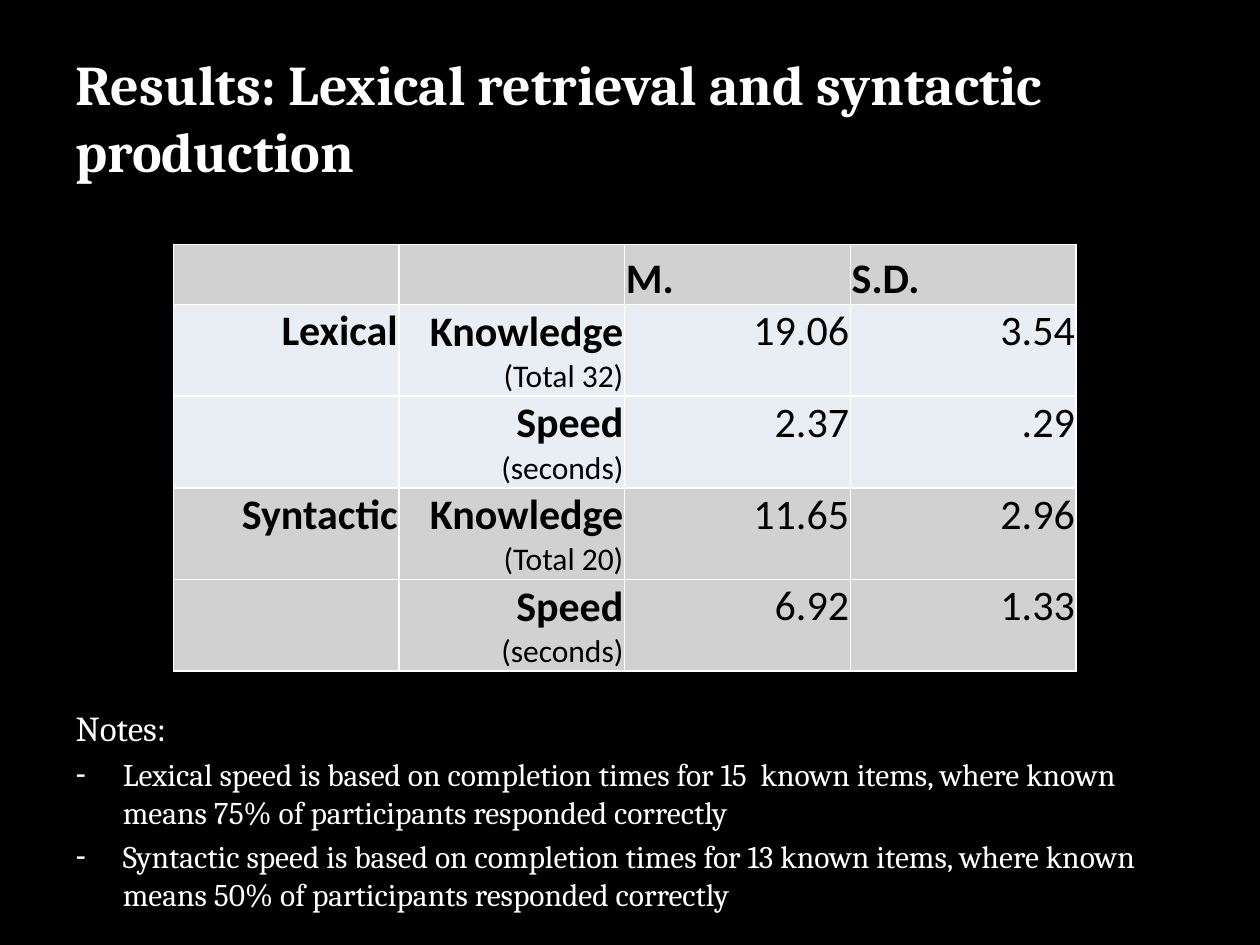
from lxml import etree
from pptx import Presentation
from pptx.dml.color import RGBColor
from pptx.enum.text import MSO_ANCHOR, MSO_AUTO_SIZE, PP_ALIGN
from pptx.oxml.ns import qn
from pptx.util import Pt

BLACK = RGBColor(0x00, 0x00, 0x00)
WHITE = RGBColor(0xFF, 0xFF, 0xFF)
GREY = RGBColor(0xD1, 0xD1, 0xD1)
PALE = RGBColor(0xE9, 0xED, 0xF4)
LEFT, RIGHT = PP_ALIGN.LEFT, PP_ALIGN.RIGHT
TOP, MIDDLE, BOTTOM = MSO_ANCHOR.TOP, MSO_ANCHOR.MIDDLE, MSO_ANCHOR.BOTTOM
NO_AUTOFIT = MSO_AUTO_SIZE.NONE

TITLE_FONT = {"name": "Cambria", "size": Pt(32), "bold": True}
NOTE_HEAD_FONT = {"name": "Cambria", "size": Pt(20), "bold": False}
NOTE_FONT = {**NOTE_HEAD_FONT, "size": Pt(18)}
LABEL_FONT = {"name": "Calibri", "size": Pt(24), "bold": True}
VALUE_FONT = {**LABEL_FONT, "bold": False}
UNIT_FONT = {**VALUE_FONT, "size": Pt(18)}


def add_span(para, text, font, color):
    span = para.add_run()
    span.text = text
    for name, value in font.items():
        setattr(span.font, name, value)
    span.font.color.rgb = color


def add_borders(cell, color, width):
    properties = cell._tc.get_or_add_tcPr()
    for side in ("a:lnL", "a:lnR", "a:lnT", "a:lnB"):
        line = etree.SubElement(properties, qn(side), w=str(width))
        fill = etree.SubElement(line, qn("a:solidFill"))
        etree.SubElement(fill, qn("a:srgbClr"), val=str(color))


deck = Presentation()
deck.slide_width, deck.slide_height = Pt(720), Pt(540)
page = deck.slides.add_slide(deck.slide_layouts[1])
page.background.fill.solid()
page.background.fill.fore_color.rgb = BLACK
title, notes = page.placeholders

# Title and notes boxes
for box, top, height, anchor in ((title, 21.6, 90, MIDDLE), (notes, 400.3, 121.7, TOP)):
    box.left, box.top, box.width, box.height = Pt(36), Pt(top), Pt(648), Pt(height)
    box.text_frame.word_wrap = True
    box.text_frame.auto_size = NO_AUTOFIT
    box.text_frame.vertical_anchor = anchor

para = title.text_frame.paragraphs[0]
para.alignment = LEFT
add_span(para, "Results: Lexical retrieval and syntactic production", TITLE_FONT, WHITE)

# Results table
ROWS = [
    (["", "", "M.", "S.D."], GREY),
    (["Lexical", "Knowledge\n(Total 32)", "19.06", "3.54"], PALE),
    (["", "Speed\n(seconds)", "2.37", ".29"], PALE),
    (["Syntactic", "Knowledge\n(Total 20)", "11.65", "2.96"], GREY),
    (["", "Speed\n(seconds)", "6.92", "1.33"], GREY),
]
HEADER_HEIGHT, ROW_HEIGHT, COLUMN_WIDTH = 34.4, 52.4, 129
table = page.shapes.add_table(
    len(ROWS), 4, Pt(99), Pt(139.6), Pt(4 * COLUMN_WIDTH), Pt(HEADER_HEIGHT + 4 * ROW_HEIGHT)
).table
for column in table.columns:
    column.width = Pt(COLUMN_WIDTH)

for row_index, (texts, color) in enumerate(ROWS):
    header = row_index == 0
    table.rows[row_index].height = Pt(HEADER_HEIGHT if header else ROW_HEIGHT)
    for column_index, text in enumerate(texts):
        cell = table.cell(row_index, column_index)
        add_borders(cell, WHITE, Pt(1))
        cell.fill.solid()
        cell.fill.fore_color.rgb = color
        if not text:
            continue
        cell.margin_left = cell.margin_right = cell.margin_top = Pt(0.75)
        cell.margin_bottom = Pt(0)
        cell.vertical_anchor = BOTTOM if header else MIDDLE if column_index == 1 else TOP
        label_font = LABEL_FONT if header or column_index < 2 else VALUE_FONT
        for line_index, line in enumerate(text.split("\n")):
            frame = cell.text_frame
            para = frame.add_paragraph() if line_index else frame.paragraphs[0]
            para.alignment = LEFT if header else RIGHT
            add_span(para, line, UNIT_FONT if line_index else label_font, BLACK)

# Notes: a plain heading, then dash bullets with a hanging indent
NOTES = [
    ("Notes:", NOTE_HEAD_FONT, 0),
    ("Lexical speed is based on completion times for 15  known items, "
     "where known means 75% of participants responded correctly", NOTE_FONT, Pt(27)),
    ("Syntactic speed is based on completion times for 13 known items, "
     "where known means 50% of participants responded correctly", NOTE_FONT, Pt(27)),
]
for index, (text, font, indent) in enumerate(NOTES):
    para = notes.text_frame.add_paragraph() if index else notes.text_frame.paragraphs[0]
    add_span(para, text, font, WHITE)
    properties = para._p.get_or_add_pPr()
    properties.set("marL", str(indent))
    properties.set("indent", str(-indent))
    if indent:
        bullet_color = etree.SubElement(properties, qn("a:buClr"))
        etree.SubElement(bullet_color, qn("a:srgbClr"), val=str(WHITE))
        etree.SubElement(properties, qn("a:buFontTx"))
        etree.SubElement(properties, qn("a:buChar"), char="-")
    else:
        etree.SubElement(properties, qn("a:buNone"))

deck.save("out.pptx")
